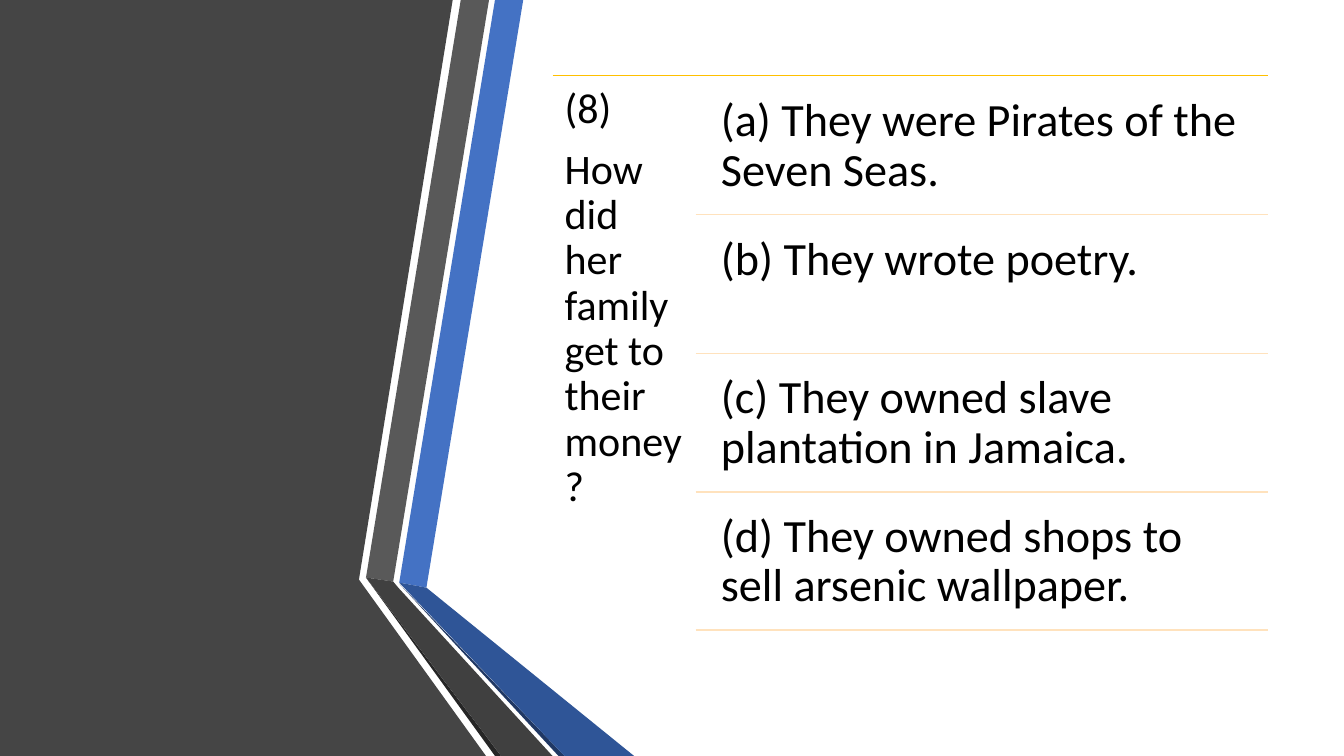
from dataclasses import dataclass

from lxml import etree
from pptx import Presentation
from pptx.dml.color import RGBColor
from pptx.enum.shapes import MSO_CONNECTOR
from pptx.enum.text import MSO_ANCHOR, MSO_AUTO_SIZE, PP_ALIGN
from pptx.oxml.ns import qn
from pptx.shapes.placeholder import SlidePlaceholder
from pptx.slide import Slide
from pptx.util import Pt

STRAIGHT = MSO_CONNECTOR.STRAIGHT
TOP = MSO_ANCHOR.TOP
NO_AUTOFIT = MSO_AUTO_SIZE.NONE
LEFT = PP_ALIGN.LEFT

EMU_PER_PX = 9144
PAGE_WIDTH, PAGE_HEIGHT = 1333, 750
COMPARISON_LAYOUT = 4


@dataclass(frozen=True)
class Theme:
    font: str = "Calibri"
    text: str = "000000"
    panel: str = "454545"
    blue: str = "4472C4"
    blue_fold: str = "2F5597"
    blue_shade: str = "203864"
    grey: str = "595959"
    grey_fold: str = "404040"
    grey_shade: str = "262626"
    top_rule: str = "FFC000"
    answer_rule: str = "FFE2BD"
    question_size: int = 30
    answer_size: int = 33
    rule_width: int = 1


@dataclass(frozen=True)
class Box:
    left: int
    top: int
    width: int
    height: int
    inset: int


@dataclass(frozen=True)
class Band:
    color: str
    points: tuple[tuple[int, int], ...]


THEME = Theme()

BANDS = (
    Band(THEME.panel, ((0, 0), (449, 0), (356, 575), (482, 750), (0, 750))),
    Band(THEME.blue, ((396, 578), (423, 583), (519, 0), (491, 0))),
    Band(THEME.grey, ((485, 0), (457, 0), (363, 573), (390, 577))),
    Band(THEME.grey_shade, ((363, 573), (491, 750), (497, 750))),
    Band(THEME.blue_shade, ((396, 579), (554, 750), (560, 750))),
    Band(THEME.blue_fold, ((396, 578), (560, 750), (629, 750), (423, 583))),
    Band(THEME.grey_fold, ((548, 750), (395, 583), (390, 577), (363, 573), (497, 750))),
)

QUESTION = ("(8)", "How did her family get to their money?")
ANSWERS = (
    "(a) They were Pirates of the Seven Seas.",
    "(b) They wrote poetry.",
    "(c) They owned slave plantation in Jamaica.",
    "(d) They owned shops to sell arsenic wallpaper.",
)

QUESTION_BOX = Box(548, 75, 142, 558, 12)
RULE_RIGHT = 1258
ANSWER_RULE_LEFT = 690
ANSWER_LEFT, ANSWER_TOP = 701, 82
ANSWER_WIDTH, ANSWER_HEIGHT = 557, 131
ANSWER_PITCH = 1375 / 10


def px(length: float) -> int:
    return round(length * EMU_PER_PX)


def draw_band(page: Slide, band: Band) -> None:
    builder = page.shapes.build_freeform(*band.points[0], scale=EMU_PER_PX)
    builder.add_line_segments(band.points[1:], close=True)
    shape = builder.convert_to_shape()
    shape.shadow.inherit = False
    shape.fill.solid()
    shape.fill.fore_color.rgb = RGBColor.from_string(band.color)
    shape.line.fill.background()


def draw_rule(page: Slide, left: int, top: int, color: str) -> None:
    rule = page.shapes.add_connector(STRAIGHT, px(left), px(top), px(RULE_RIGHT), px(top))
    rule.line.color.rgb = RGBColor.from_string(color)
    rule.line.width = Pt(THEME.rule_width)
    etree.SubElement(rule.element.spPr, qn("a:effectLst"))


def fill_placeholder(
    holder: SlidePlaceholder, box: Box, lines: tuple[str, ...], size: int
) -> None:
    holder.left, holder.top = px(box.left), px(box.top)
    holder.width, holder.height = px(box.width), px(box.height)
    frame = holder.text_frame
    frame.word_wrap = True
    frame.auto_size = NO_AUTOFIT
    frame.vertical_anchor = TOP
    frame.margin_left = frame.margin_right = px(box.inset)
    frame.margin_top = frame.margin_bottom = px(box.inset)
    frame.text = "\n".join(lines)
    for para in frame.paragraphs:
        para.alignment = LEFT
        para.line_spacing = 0.9
        para.space_before = Pt(0)
        para.space_after = Pt(size * 0.35)
        para.font.name = THEME.font
        para.font.size = Pt(size)
        para.font.bold = False
        para.font.color.rgb = RGBColor.from_string(THEME.text)
        properties = para._p.get_or_add_pPr()
        properties.set("marL", "0")
        properties.set("indent", "0")
        bullet = etree.Element(qn("a:buNone"))
        properties.find(qn("a:defRPr")).addprevious(bullet)


def main() -> None:
    deck = Presentation()
    deck.slide_width, deck.slide_height = px(PAGE_WIDTH), px(PAGE_HEIGHT)
    page = deck.slides.add_slide(deck.slide_layouts[COMPARISON_LAYOUT])
    title, *answer_holders = page.placeholders

    for band in BANDS:
        draw_band(page, band)

    draw_rule(page, QUESTION_BOX.left, QUESTION_BOX.top, THEME.top_rule)
    fill_placeholder(title, QUESTION_BOX, QUESTION, THEME.question_size)

    for index, (holder, answer) in enumerate(zip(answer_holders, ANSWERS)):
        top = round(ANSWER_TOP + index * ANSWER_PITCH)
        box = Box(ANSWER_LEFT, top, ANSWER_WIDTH, ANSWER_HEIGHT, 14)
        fill_placeholder(holder, box, (answer,), THEME.answer_size)
        draw_rule(page, ANSWER_RULE_LEFT, top + ANSWER_HEIGHT, THEME.answer_rule)

    deck.save("out.pptx")


if __name__ == "__main__":
    main()
